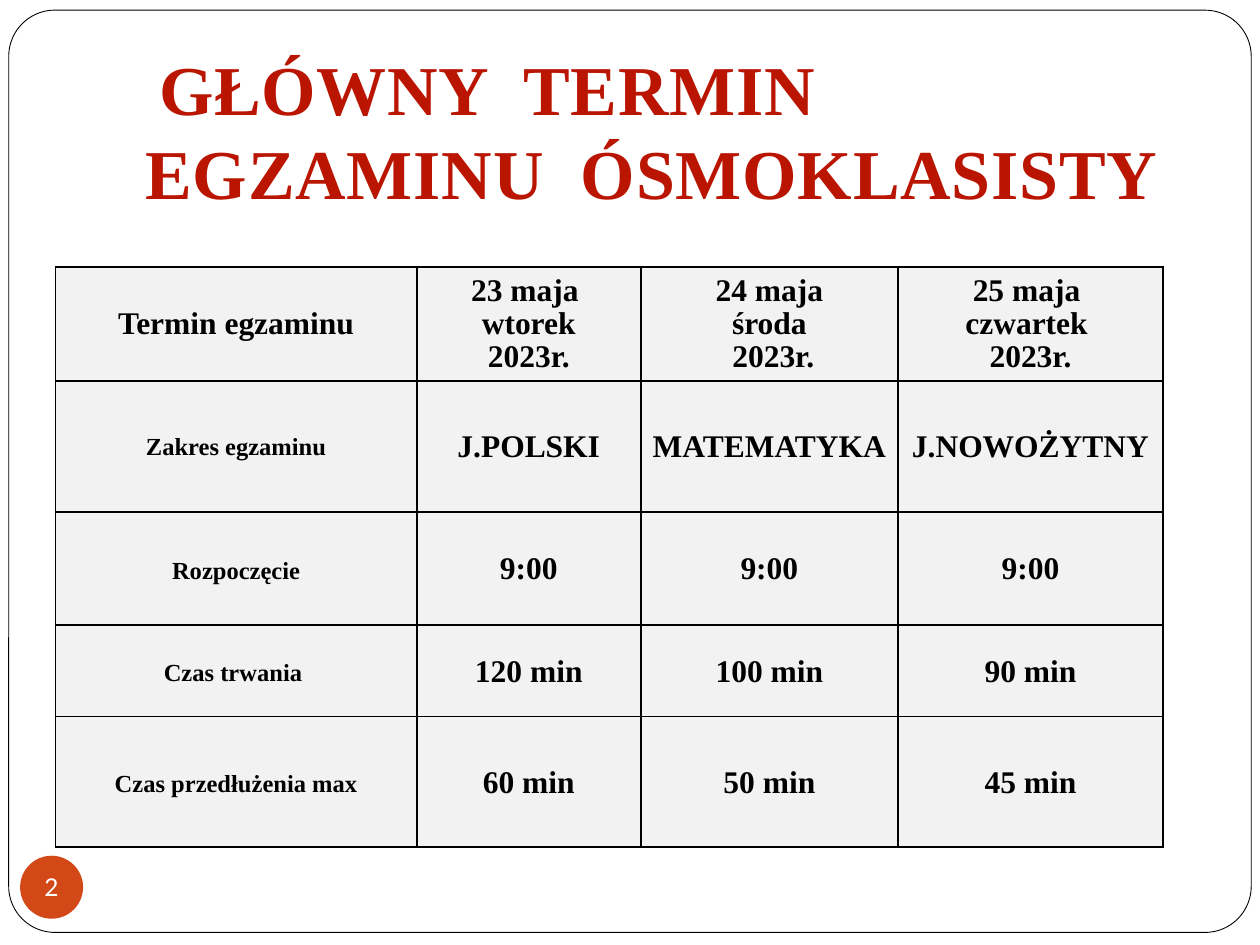
from lxml.etree import SubElement
from pptx import Presentation
from pptx.dml.color import RGBColor
from pptx.enum.shapes import MSO_SHAPE
from pptx.enum.text import MSO_ANCHOR, PP_ALIGN
from pptx.oxml.ns import qn
from pptx.util import Pt

COLORS = {
    "paper": "FFFFFF",
    "ink": "000000",
    "title": "BA1500",
    "cell": "F2F2F2",
    "badge": "D34817",
}
SERIF = {"name": "Times New Roman", "bold": True}
TITLE = {**SERIF, "size": Pt(40)}
ENTRY = {**SERIF, "size": Pt(18)}
ROW_LABEL = {**SERIF, "size": Pt(14)}
PAGE_NUMBER = {"name": "Lato", "size": Pt(14)}
CELL_LAYOUT = {
    "vertical_anchor": MSO_ANCHOR.MIDDLE,
    "margin_left": Pt(5),
    "margin_right": Pt(5),
    "margin_top": Pt(0.7),
    "margin_bottom": Pt(0),
}
COLUMN_WIDTHS = [206.5, 128, 147, 151.5]
ROW_HEIGHTS = [65, 75, 64.5, 52.5, 74.5]
SCHEDULE = [
    ["Termin egzaminu", "23 maja \nwtorek\n2023r.", "24 maja\nśroda\n 2023r.",
     "25 maja \nczwartek \n2023r."],
    ["Zakres egzaminu", "J.POLSKI", "MATEMATYKA", "J.NOWOŻYTNY"],
    ["Rozpoczęcie", "9:00", "9:00", "9:00"],
    ["Czas trwania ", "120 min", "100 min", "90 min"],
    ["Czas przedłużenia max", "60 min", "50 min", "45 min"],
]


def rgb(color):
    return RGBColor.from_string(COLORS[color])


def apply(target, values):
    for attribute, value in values.items():
        setattr(target, attribute, value)


def write(frame, text, font, color, **layout):
    frame.text = text
    for paragraph in frame.paragraphs:
        apply(paragraph, {"alignment": PP_ALIGN.CENTER, **layout})
        for run in paragraph.runs:
            apply(run.font, font)
            run.font.color.rgb = rgb(color)


def add_panel(slide, kind, box, fill, outline=None):
    panel = slide.shapes.add_shape(kind, *map(Pt, box))
    panel.shadow.inherit = False
    panel.fill.solid()
    panel.fill.fore_color.rgb = rgb(fill)
    if outline:
        panel.line.color.rgb = rgb(outline)
        panel.line.width = Pt(0.5)
    else:
        panel.line.fill.background()
    return panel


def add_title(slide):
    heading = slide.shapes.add_textbox(Pt(59.8), Pt(20.2), Pt(625.7), Pt(104.4))
    frame = heading.text_frame
    apply(frame, {"word_wrap": True, "margin_top": Pt(6), "margin_bottom": Pt(0)})
    write(frame, "GŁÓWNY  TERMIN\nEGZAMINU  ÓSMOKLASISTY", TITLE, "title",
          line_spacing=Pt(48))
    for line in frame.paragraphs:
        for run in line.runs:
            run.font._element.set("spc", "50")
    first_line = frame.paragraphs[0]
    first_line.alignment = PP_ALIGN.LEFT
    first_line._p.get_or_add_pPr().set("marL", str(Pt(24)))


def add_borders(cell):
    properties = cell._tc.get_or_add_tcPr()
    for side in ("lnL", "lnR", "lnT", "lnB"):
        border = SubElement(properties, qn(f"a:{side}"), w=str(Pt(1)))
        SubElement(SubElement(border, qn("a:solidFill")), qn("a:srgbClr"),
                   val=COLORS["ink"])


def add_schedule(slide):
    schedule = slide.shapes.add_table(
        len(ROW_HEIGHTS), len(COLUMN_WIDTHS), Pt(31.7), Pt(152.6),
        Pt(sum(COLUMN_WIDTHS)), Pt(sum(ROW_HEIGHTS))).table
    apply(schedule, {"first_row": False, "horz_banding": False})
    for column, width in zip(schedule.columns, COLUMN_WIDTHS):
        column.width = Pt(width)
    for row, height in zip(schedule.rows, ROW_HEIGHTS):
        row.height = Pt(height)
    for r, entries in enumerate(SCHEDULE):
        for c, entry in enumerate(entries):
            cell = schedule.cell(r, c)
            apply(cell, CELL_LAYOUT)
            add_borders(cell)
            cell.fill.solid()
            cell.fill.fore_color.rgb = rgb("cell")
            is_label = r > 0 and c == 0
            spacing = 1.15 if is_label and r > 1 else 0.95 if r == 0 else 1.0
            write(cell.text_frame, entry, ROW_LABEL if is_label else ENTRY, "ink",
                  line_spacing=spacing)


def add_page_badge(slide):
    badge = add_panel(slide, MSO_SHAPE.OVAL, (11.5, 489, 36, 36), "badge")
    margins = ("margin_left", "margin_right", "margin_top", "margin_bottom")
    apply(badge.text_frame, {"word_wrap": False,
                             "vertical_anchor": MSO_ANCHOR.MIDDLE,
                             **dict.fromkeys(margins, 0)})
    write(badge.text_frame, "2", PAGE_NUMBER, "paper")


def main():
    presentation = Presentation()
    apply(presentation, {"slide_width": Pt(720), "slide_height": Pt(540)})
    slide = presentation.slides.add_slide(presentation.slide_layouts[6])
    page_frame = add_panel(slide, MSO_SHAPE.ROUNDED_RECTANGLE,
                           (5, 5.8, 710, 527), "paper", "ink")
    page_frame.adjustments[0] = 0.05
    add_page_badge(slide)
    add_title(slide)
    add_schedule(slide)
    presentation.save("out.pptx")


if __name__ == "__main__":
    main()
